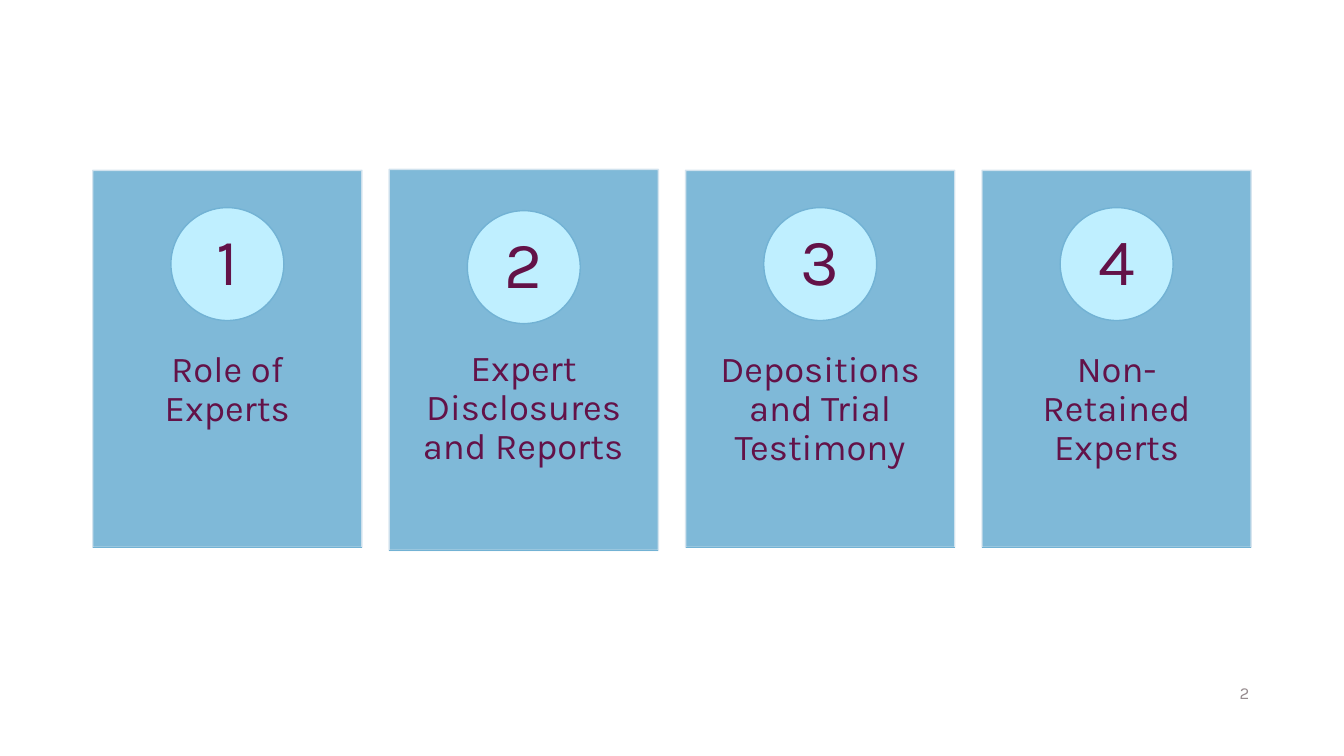
from lxml.etree import SubElement
from pptx import Presentation
from pptx.dml.color import RGBColor
from pptx.enum.shapes import MSO_CONNECTOR, MSO_SHAPE
from pptx.enum.text import MSO_ANCHOR, PP_ALIGN
from pptx.oxml.ns import qn
from pptx.util import Inches, Pt

BLUE = RGBColor(0x72, 0xB2, 0xD4)
EDGE = RGBColor(0xD5, 0xE4, 0xEF)
PALE = RGBColor(0xBF, 0xEF, 0xFF)
PLUM = RGBColor(0x63, 0x12, 0x48)
GREY = RGBColor(0x97, 0x8C, 0x8F)


class Deck:
    """Holds the style and the current slide."""
    font = "Karla"

    def __init__(self, slide):
        self.slide = slide

    def shape(self, kind, box, fill, line, alpha=None):
        item = self.slide.shapes.add_shape(kind, *map(Inches, box))
        item.shadow.inherit = False
        item.fill.solid()
        item.fill.fore_color.rgb = fill
        item.line.color.rgb = line
        item.line.width = Pt(1)
        if alpha:
            for clr in item._element.spPr.iter(qn("a:srgbClr")):
                SubElement(clr, qn("a:alpha"), val=str(alpha * 1000))

    def rule(self, left, top, width):
        line = self.slide.shapes.add_connector(
            MSO_CONNECTOR.STRAIGHT, Inches(left), Inches(top),
            Inches(left + width), Inches(top))
        line.line.color.rgb = BLUE
        line.line.width = Pt(1)
        SubElement(line._element.spPr, qn("a:effectLst"))

    def text(self, box, words, size, color=PLUM, align=PP_ALIGN.CENTER,
             anchor=MSO_ANCHOR.TOP, pad=(0.1, 0.05), space=0.9):
        frame = self.slide.shapes.add_textbox(*map(Inches, box)).text_frame
        frame.word_wrap = True
        frame.vertical_anchor = anchor
        frame.margin_left = frame.margin_right = Inches(pad[0])
        frame.margin_top = frame.margin_bottom = Inches(pad[1])
        para = frame.paragraphs[0]
        para.alignment = align
        para.line_spacing = space
        run = para.add_run()
        run.text = words
        run.font.name = self.font
        run.font.size = Pt(size)
        run.font.color.rgb = color

    def card(self, left, top, high, drop, num, words):
        wide, disc, label = 2.67, 1.12, 0.79
        mid = left + wide / 2
        self.shape(MSO_SHAPE.RECTANGLE, (left, top, wide, high),
                   BLUE, EDGE, alpha=90)
        self.text((left, top + 1.43, wide, 2.25), words, 26,
                  pad=(0.21, 0.36))
        self.shape(MSO_SHAPE.OVAL, (mid - disc / 2, top + drop, disc, disc),
                   PALE, BLUE)
        inset = (disc - label) / 2
        self.text((mid - label / 2, top + drop + inset, label, label),
                  str(num), 47, anchor=MSO_ANCHOR.MIDDLE, pad=(0.09, 0.01))
        self.rule(left, top + high, wide)


def main():
    prs = Presentation()
    prs.slide_width, prs.slide_height = Inches(13.33), Inches(7.5)
    deck = Deck(prs.slides.add_slide(prs.slide_layouts[6]))

    # Topic cards: top, height, disc offset, words
    cards = [
        (1.69, 3.74, 0.37, "Role of Experts"),
        (1.68, 3.78, 0.41, "Expert Disclosures and Reports\t"),
        (1.69, 3.74, 0.37, "Depositions and Trial Testimony"),
        (1.69, 3.74, 0.37, "Non-Retained Experts"),
    ]
    for i, (top, high, drop, words) in enumerate(cards):
        deck.card(0.92 + 2.94 * i, top, high, drop, i + 1, words)

    # Page number
    deck.text((5.75, 6.72, 6.74, 0.3), "2", 12, GREY, PP_ALIGN.RIGHT, space=1)

    prs.save("out.pptx")


if __name__ == "__main__":
    main()
